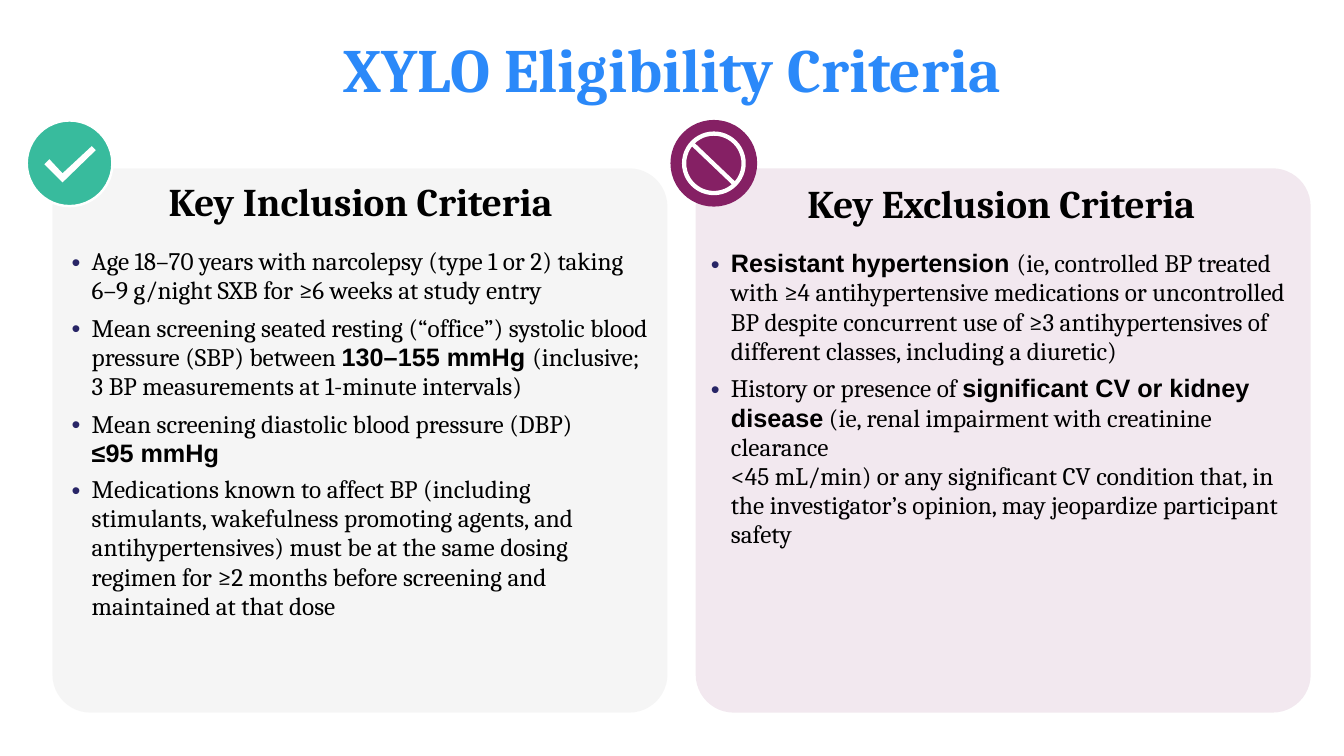
from lxml.etree import SubElement
from pptx import Presentation
from pptx.dml.color import RGBColor
from pptx.enum.shapes import MSO_CONNECTOR, MSO_SHAPE
from pptx.enum.text import MSO_ANCHOR, PP_ALIGN
from pptx.oxml.ns import qn
from pptx.util import Inches, Pt

COLORS = {
    "title": "2B89F9", "text": "000000", "bullet": "282566", "white": "FFFFFF",
    "grey": "A6A6A6", "green": "38BB9D", "plum": "852064",
}
SERIF, SANS = "Cambria", "Arial"
NO_GRID_STYLE = "{2D5ABB26-0587-4C30-8999-92F81FD0307C}"

# Each bullet is a list of (text, is highlighted) pieces; "\n" is a line break.
INCLUSION = [
    [("Age 18–70 years with narcolepsy (type 1 or 2) taking 6–9 g/night SXB "
      "for ≥6 weeks at study entry", False)],
    [("Mean screening seated resting (“office”) systolic blood pressure (SBP) between ", False),
     ("130–155 mmHg ", True),
     ("(inclusive; \n3 BP measurements at 1-minute intervals)", False)],
    [("Mean screening diastolic blood pressure (DBP) \n", False), ("≤95 mmHg", True)],
    [("Medications known to affect BP (including stimulants, wakefulness promoting agents, "
      "and antihypertensives) must be at the same dosing regimen for ≥2 months before "
      "screening and maintained at that dose", False)],
]
EXCLUSION = [
    [("Resistant hypertension ", True),
     ("(ie, controlled BP treated with ≥4 antihypertensive medications or uncontrolled BP "
      "despite concurrent use of ≥3 antihypertensives of different classes, including a "
      "diuretic)", False)],
    [("History or presence of ", False), ("significant CV or kidney disease", True),
     (" (ie, renal impairment with creatinine clearance \n<45 mL/min) or any significant CV "
      "condition that, in the investigator’s opinion, may jeopardize participant safety", False)],
]
CHECK_MARK = [(0.91, 1.45), (0.62, 1.72), (0.49, 1.58), (0.44, 1.63), (0.62, 1.81), (0.95, 1.49)]


def color(name):
    return RGBColor.from_string(COLORS[name])


class CriteriaSlide:
    def __init__(self, presentation):
        self.slide = presentation.slides.add_slide(presentation.slide_layouts[5])
        self.shapes = self.slide.shapes

    def add_run(self, paragraph, text, size, font=SERIF, bold=False, fill="text"):
        for index, part in enumerate(text.split("\n")):
            if index:
                paragraph.add_line_break()
            if part:
                run = paragraph.add_run()
                run.text = part
                run.font.name, run.font.size, run.font.bold = font, Pt(size), bold
                run.font.color.rgb = color(fill)

    def add_title(self, text):
        title = self.shapes.title
        title.left, title.top = Inches(0.92), Inches(-0.01)
        title.width, title.height = Inches(11.5), Inches(1.45)
        title.text_frame.vertical_anchor = MSO_ANCHOR.MIDDLE
        paragraph = title.text_frame.paragraphs[0]
        paragraph.alignment, paragraph.line_spacing = PP_ALIGN.CENTER, 0.9
        self.add_run(paragraph, text, 44, bold=True, fill="title")

    def paint(self, shape, fill=None, line=None, line_width=0):
        shape.shadow.inherit = False
        if fill:
            shape.fill.solid()
            shape.fill.fore_color.rgb = color(fill)
        else:
            shape.fill.background()
        if line:
            shape.line.color.rgb = color(line)
            shape.line.width = Pt(line_width)
        else:
            shape.line.fill.background()

    def add_panel(self, left, fill):
        panel = self.shapes.add_shape(MSO_SHAPE.ROUNDED_RECTANGLE, Inches(left), Inches(1.67),
                                      Inches(6.1), Inches(5.4))
        panel.adjustments[0] = 0.07
        self.paint(panel, fill)
        fill_color = panel.fill._xPr.find(qn("a:solidFill"))[0]
        SubElement(fill_color, qn("a:alpha"), val="10000")

    def add_circle(self, center_x, diameter, fill=None, line=None, line_width=0):
        circle = self.shapes.add_shape(
            MSO_SHAPE.OVAL, Inches(center_x - diameter / 2), Inches(1.62 - diameter / 2),
            Inches(diameter), Inches(diameter))
        self.paint(circle, fill, line, line_width)

    def add_outline(self, points, fill):
        corners = [(Inches(x), Inches(y)) for x, y in points]
        builder = self.shapes.build_freeform(*corners[0])
        builder.add_line_segments(corners[1:], close=True)
        self.paint(builder.convert_to_shape(), fill)

    def add_line(self, start, end, fill, width):
        line = self.shapes.add_connector(MSO_CONNECTOR.STRAIGHT,
                                         *(Inches(value) for value in start + end))
        line.line.color.rgb = color(fill)
        line.line.width = Pt(width)
        SubElement(line._element.spPr, qn("a:effectLst"))

    def add_bullet(self, paragraph, pieces):
        properties = paragraph._p.get_or_add_pPr()
        properties.set("marL", str(Inches(0.2)))
        properties.set("indent", str(Inches(-0.2)))
        bullet_color = SubElement(properties, qn("a:buClr"))
        SubElement(bullet_color, qn("a:srgbClr"), val=COLORS["bullet"])
        SubElement(properties, qn("a:buFont"), typeface=SANS)
        SubElement(properties, qn("a:buChar"), char="•")
        paragraph.space_after = Pt(6)
        for text, highlighted in pieces:
            self.add_run(paragraph, text, 18, SANS if highlighted else SERIF, highlighted)

    def add_criteria_table(self, left, top, width, row_heights, heading, bullets):
        frame = self.shapes.add_table(len(row_heights), 1, Inches(left), Inches(top),
                                      Inches(width), Inches(sum(row_heights)))
        table = frame.table
        table.first_row = table.horz_banding = False
        table._tbl.tblPr.find(qn("a:tableStyleId")).text = NO_GRID_STYLE
        for row, height in zip(table.rows, row_heights):
            row.height = Inches(height)
            cell = row.cells[0]
            cell.fill.background()
            cell.margin_left = cell.margin_right = cell.margin_top = cell.margin_bottom = 0

        paragraph = table.cell(0, 0).text_frame.paragraphs[0]
        paragraph.alignment, paragraph.line_spacing = PP_ALIGN.CENTER, 0.8
        self.add_run(paragraph, heading, 28, bold=True)

        body = table.cell(1, 0).text_frame
        for index, pieces in enumerate(bullets):
            paragraph = body.add_paragraph() if index else body.paragraphs[0]
            self.add_bullet(paragraph, pieces)


def main():
    presentation = Presentation()
    presentation.slide_width, presentation.slide_height = Inches(13.33), Inches(7.5)
    slide = CriteriaSlide(presentation)
    slide.add_title("XYLO Eligibility Criteria")

    slide.add_panel(0.52, "grey")
    slide.add_circle(0.69, 0.85, "green")
    slide.add_circle(0.69, 0.85, line="white", line_width=1.77)
    slide.add_outline(CHECK_MARK, "white")
    slide.add_criteria_table(0.71, 1.86, 5.73, [0.6, 2.85], "Key Inclusion Criteria", INCLUSION)

    slide.add_panel(6.9, "plum")
    slide.add_circle(7.08, 0.86, "plum")
    slide.add_circle(7.08, 0.59, "plum", "white", 3.05)
    slide.add_line((6.86, 1.42), (7.28, 1.82), "white", 3.05)
    slide.add_criteria_table(7.05, 1.88, 5.76, [0.6, 3.51, 0.31], "Key Exclusion Criteria",
                             EXCLUSION)
    presentation.save("out.pptx")


if __name__ == "__main__":
    main()
